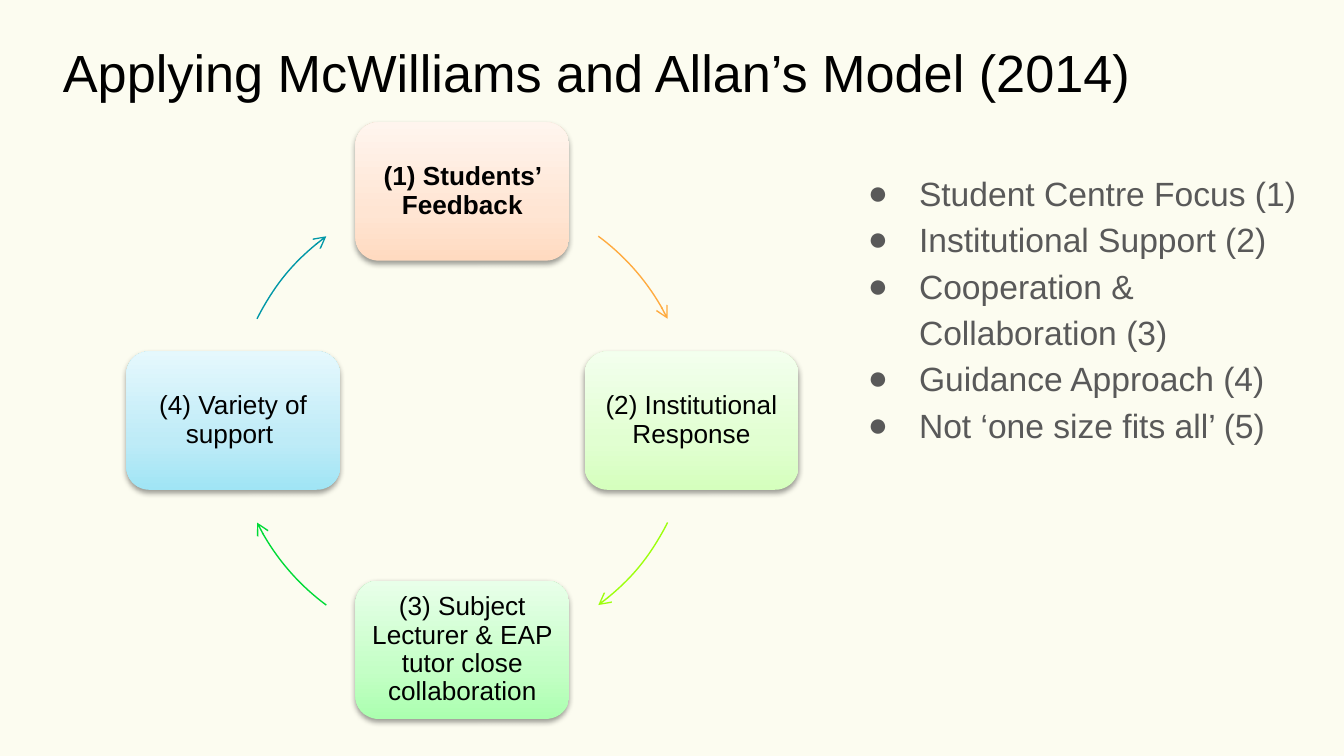
from copy import deepcopy

from lxml.etree import SubElement
from pptx import Presentation
from pptx.dml.color import RGBColor
from pptx.enum.shapes import MSO_SHAPE as Shape
from pptx.enum.text import MSO_ANCHOR as Anchor, PP_ALIGN as Align
from pptx.oxml.ns import qn
from pptx.util import Inches, Pt

FONT = "Arial"
CREAM = RGBColor(0xFC, 0xFC, 0xF0)
BLACK = RGBColor(0, 0, 0)
GREY = RGBColor(0x59, 0x59, 0x59)
ORANGE = RGBColor(0xFF, 0xAB, 0x40)
LIME = RGBColor(0x9D, 0xFF, 0x0D)
GREEN = RGBColor(0x00, 0xDA, 0x37)
TEAL = RGBColor(0x00, 0x97, 0xA7)
PEACH_SHADES = RGBColor(0xFF, 0xDA, 0xC0), RGBColor(0xFF, 0xE5, 0xD3), RGBColor(0xFF, 0xF5, 0xEE)
LIME_SHADES = RGBColor(0xD5, 0xFF, 0xBD), RGBColor(0xE1, 0xFF, 0xD1), RGBColor(0xF3, 0xFF, 0xEE)
GREEN_SHADES = RGBColor(0xAB, 0xFF, 0xAF), RGBColor(0xC4, 0xFF, 0xC6), RGBColor(0xE8, 0xFF, 0xE9)
BLUE_SHADES = RGBColor(0xA0, 0xE5, 0xF5), RGBColor(0xBE, 0xEB, 0xF7), RGBColor(0xE5, 0xF8, 0xFD)

STEPS = [
    ("(1) Students’ Feedback", PEACH_SHADES, 0, -1, ORANGE, 320),
    ("(2) Institutional Response", LIME_SHADES, 1, 0, LIME, 40),
    ("(3) Subject Lecturer & EAP tutor close collaboration", GREEN_SHADES, 0, 1, GREEN, 140),
    ("(4) Variety of support ", BLUE_SHADES, -1, 0, TEAL, 220),
]
PRINCIPLES = [
    "Student Centre Focus (1)",
    "Institutional Support (2)",
    "Cooperation & Collaboration (3)",
    "Guidance Approach (4)",
    "Not ‘one size fits all’ (5)",
]


def set_inset(frame, inset):
    frame.word_wrap = True
    frame.margin_left = frame.margin_right = Inches(inset)
    frame.margin_top = frame.margin_bottom = Inches(inset)


def style_text(paragraph, size, color, bold=False):
    for run in paragraph.runs:
        run.font.name = FONT
        run.font.size = Pt(size)
        run.font.color.rgb = color
        run.font.bold = bold


def add_text_frame(slide, left, top, width, height):
    frame = slide.shapes.add_textbox(
        Inches(left), Inches(top), Inches(width), Inches(height)).text_frame
    set_inset(frame, 0.1)
    return frame


def add_title(slide, left, top, width, height):
    title = add_text_frame(slide, left, top, width, height).paragraphs[0]
    title.text = "Applying McWilliams and Allan’s Model (2014)"
    style_text(title, 28, BLACK)


def add_principles(slide, left, top, width, height):
    frame = add_text_frame(slide, left, top, width, height)
    frame.text = "\n".join(PRINCIPLES)
    for principle in frame.paragraphs:
        principle.line_spacing = 1.15
        style_text(principle, 18, GREY)
        properties = principle._p.get_or_add_pPr()
        properties.set("marL", str(Inches(0.5)))
        properties.set("indent", str(Inches(-0.38)))
        bullet_color = SubElement(properties, qn("a:buClr"))
        SubElement(bullet_color, qn("a:srgbClr"), val=str(GREY))
        SubElement(properties, qn("a:buFont"), typeface=FONT)
        SubElement(properties, qn("a:buChar"), char="●")


def fill_gradient(step, shades):
    step.fill.gradient()
    step.fill.gradient_angle = 90
    stop_list = step._element.spPr.find(".//" + qn("a:gsLst"))
    stop_list.insert(1, deepcopy(stop_list[0]))
    for stop, position, shade in zip(step.fill.gradient_stops, (0, 0.35, 1), shades):
        stop.position = position
        stop.color.rgb = shade


def add_soft_shadow(step):
    step.shadow.inherit = False
    effects = step._element.spPr.find(qn("a:effectLst"))
    shadow = SubElement(effects, qn("a:outerShdw"), blurRad=str(Pt(3.1)),
                        dist=str(Pt(1.6)), dir="5400000", rotWithShape="0")
    shadow_color = SubElement(shadow, qn("a:srgbClr"), val=str(BLACK))
    SubElement(shadow_color, qn("a:alpha"), val="38000")


def add_step(slide, label, shades, left, top, width, height, bold):
    step = slide.shapes.add_shape(
        Shape.ROUNDED_RECTANGLE, Inches(left), Inches(top), Inches(width), Inches(height))
    step.line.fill.background()
    fill_gradient(step, shades)
    add_soft_shadow(step)
    frame = step.text_frame
    set_inset(frame, 0.06)
    frame.vertical_anchor = Anchor.MIDDLE
    frame.text = label
    paragraph = frame.paragraphs[0]
    paragraph.alignment = Align.CENTER
    paragraph.line_spacing = 0.9
    style_text(paragraph, 14, BLACK, bold)


def add_cycle_arrow(slide, left, top, diameter, middle_angle, color):
    arrow = slide.shapes.add_shape(
        Shape.ARC, Inches(left), Inches(top), Inches(diameter), Inches(diameter))
    half_sweep = 13.6
    for index, angle in enumerate((middle_angle - half_sweep, middle_angle + half_sweep)):
        arrow.adjustments[index] = angle * 0.6
    arrow.shadow.inherit = False
    arrow.fill.background()
    arrow.line.color.rgb = color
    arrow.line.width = Pt(0.75)
    SubElement(arrow._element.spPr.find(qn("a:ln")), qn("a:tailEnd"), type="arrow")


def add_cycle(slide, left, top, width, height):
    step_width, step_height = 1.59, 1.03
    diameter = height - step_height
    radius = diameter / 2
    center_x, center_y = left + width / 2, top + height / 2
    for number, (label, shades, across, down, color, angle) in enumerate(STEPS, 1):
        add_step(slide, label, shades,
                 center_x + across * radius - step_width / 2,
                 center_y + down * radius - step_height / 2,
                 step_width, step_height, bold=number == 1)
        add_cycle_arrow(slide, center_x - radius, center_y - radius, diameter, angle, color)


def main():
    presentation = Presentation()
    presentation.slide_width = Inches(10)
    presentation.slide_height = presentation.slide_width * 9 // 16
    slide = presentation.slides.add_slide(presentation.slide_layouts[6])
    slide.background.fill.solid()
    slide.background.fill.fore_color.rgb = CREAM
    add_title(slide, 0.37, 0.2, 9.32, 0.63)
    add_principles(slide, 6.24, 1.14, 3.76, 3.98)
    add_cycle(slide, 0.94, 0.91, 5, 4.44)
    presentation.save("out.pptx")


if __name__ == "__main__":
    main()
